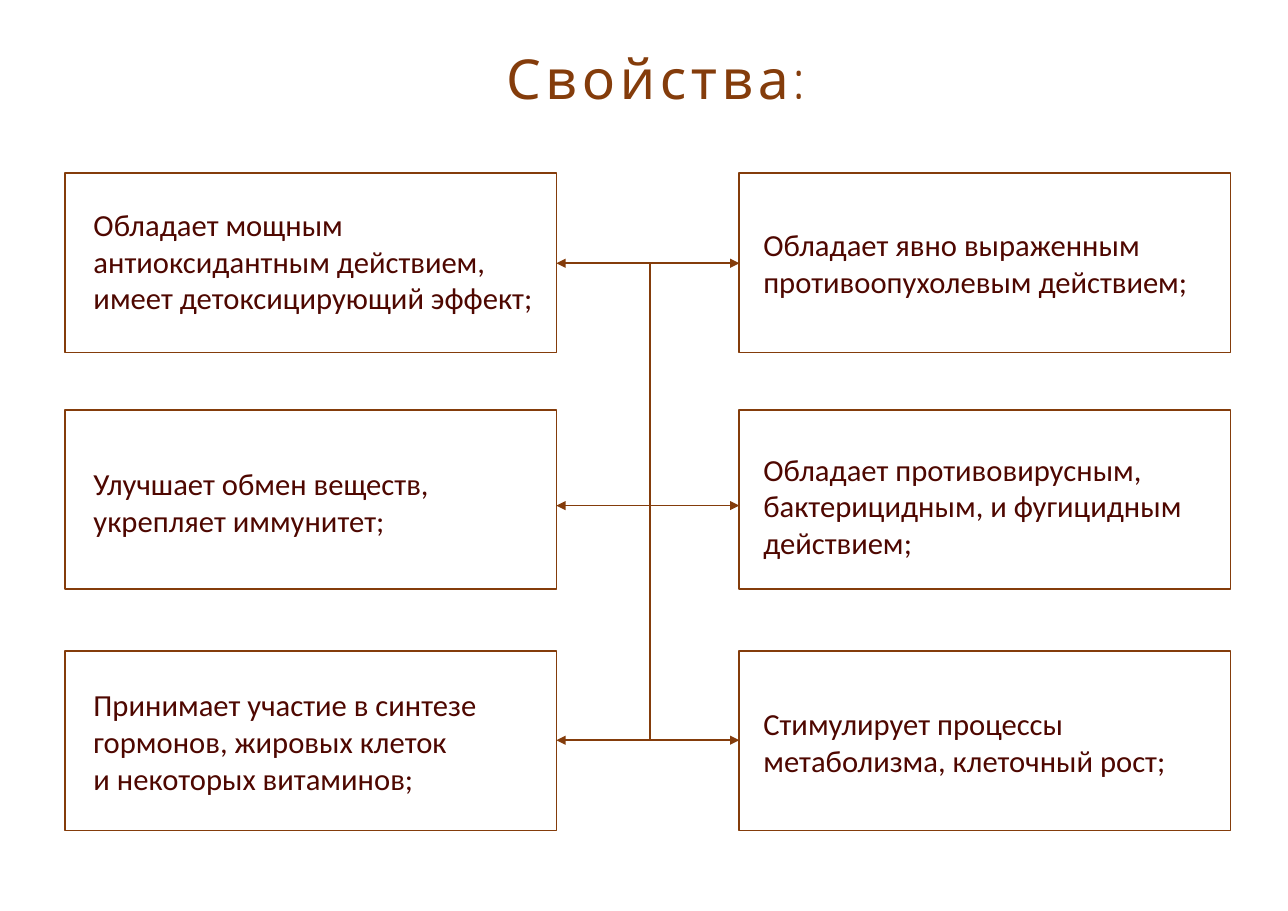
import dataclasses

import lxml.etree
import pptx
import pptx.dml.color
import pptx.enum.shapes
import pptx.enum.text
import pptx.oxml.ns
import pptx.util

# Content: one list per column; each card holds its paragraphs and the text area (top, width, height)
TITLE = "Свойства:"
LEFT_CARDS = [
    (["Обладает мощным антиоксидантным действием, имеет детоксицирующий эффект;"],
     (1.82, 4.19, 1.41)),
    (["Улучшает обмен веществ, укрепляет иммунитет;"], (4.17, 4.03, 0.98)),
    (["Принимает участие в синтезе гормонов, жировых клеток", "и некоторых витаминов;"],
     (6.18, 4.31, 1.06)),
]
RIGHT_CARDS = [
    (["Обладает явно выраженным противоопухолевым действием;"], (2, 4.46, 1.05)),
    (["Обладает противовирусным, бактерицидным, и фугицидным действием;"],
     (4.04, 4.46, 1.1)),
    (["Стимулирует процессы метаболизма, клеточный рост;"], (6.35, 4.46, 0.99)),
]


@dataclasses.dataclass(frozen=True)
class Theme:
    accent: str = "843C0B"
    ink: str = "4E0700"
    title_font: str = "Quicksand"
    body_font: str = "Calibri"
    title_size: int = 36
    body_size: int = 20
    title_spacing: int = 3
    line_width: int = 1


THEME = Theme()

# Grid, in inches
SLIDE_WIDTH, SLIDE_HEIGHT = 11.69, 8.27
CARD_WIDTH, CARD_HEIGHT = 4.46, 1.63
COLUMN_LEFTS = (0.59, 6.71)
TEXT_INDENTS = (0.16, 0.12)
ROW_TOPS = (1.57, 3.72, 5.91)
ARROW_ROWS = (2.39, 4.59, 6.72)
SPINE = 5.9
TITLE_AREA = (3.53, 0.35, 4.83, 0.94)


def inches(*lengths):
    return [pptx.util.Inches(length) for length in lengths]


def color(code):
    return pptx.dml.color.RGBColor.from_string(code)


def write(box, paragraphs, *, font, size, ink, align=None, spacing=0):
    frame = box.text_frame
    frame.word_wrap = True
    frame.auto_size = pptx.enum.text.MSO_AUTO_SIZE.NONE
    frame.vertical_anchor = pptx.enum.text.MSO_ANCHOR.TOP
    for index, text in enumerate(paragraphs):
        para = frame.paragraphs[0] if index == 0 else frame.add_paragraph()
        para.alignment = align
        span = para.add_run()
        span.text = text
        span.font.name = font
        span.font.size = pptx.util.Pt(size)
        span.font.color.rgb = color(ink)
        if spacing:
            span._r.get_or_add_rPr().set("spc", str(spacing * 100))


def outline(shape):
    shape.line.color.rgb = color(THEME.accent)
    shape.line.width = pptx.util.Pt(THEME.line_width)


def add_line(page, start, end, arrow=False):
    line = page.shapes.add_connector(
        pptx.enum.shapes.MSO_CONNECTOR.STRAIGHT, *inches(*start, *end))
    outline(line)
    if arrow:
        head = lxml.etree.SubElement(line.line._get_or_add_ln(),
                                     pptx.oxml.ns.qn("a:tailEnd"))
        head.set("type", "triangle")
    lxml.etree.SubElement(line._element.spPr, pptx.oxml.ns.qn("a:effectLst"))


def add_card(page, left, top, indent, paragraphs, text_area):
    card = page.shapes.add_shape(pptx.enum.shapes.MSO_SHAPE.RECTANGLE,
                                 *inches(left, top, CARD_WIDTH, CARD_HEIGHT))
    card.shadow.inherit = False
    card.fill.background()
    outline(card)
    text_top, width, height = text_area
    box = page.shapes.add_textbox(*inches(left + indent, text_top, width, height))
    write(box, paragraphs, font=THEME.body_font, size=THEME.body_size, ink=THEME.ink)


def main():
    deck = pptx.Presentation()
    deck.slide_width, deck.slide_height = inches(SLIDE_WIDTH, SLIDE_HEIGHT)
    page = deck.slides.add_slide(deck.slide_layouts[5])

    # Title
    title = page.shapes.title
    title.left, title.top, title.width, title.height = inches(*TITLE_AREA)
    write(title, [TITLE], font=THEME.title_font, size=THEME.title_size, ink=THEME.accent,
          align=pptx.enum.text.PP_ALIGN.CENTER, spacing=THEME.title_spacing)

    # Cards in two columns
    for left, indent, cards in zip(COLUMN_LEFTS, TEXT_INDENTS, (LEFT_CARDS, RIGHT_CARDS)):
        for top, (paragraphs, text_area) in zip(ROW_TOPS, cards):
            add_card(page, left, top, indent, paragraphs, text_area)

    # Spine with an arrow to each card
    add_line(page, (SPINE, ARROW_ROWS[0]), (SPINE, ARROW_ROWS[-1]))
    for row in ARROW_ROWS:
        for edge in (COLUMN_LEFTS[0] + CARD_WIDTH, COLUMN_LEFTS[1]):
            add_line(page, (SPINE, row), (edge, row), arrow=True)

    deck.save("out.pptx")


if __name__ == "__main__":
    main()
